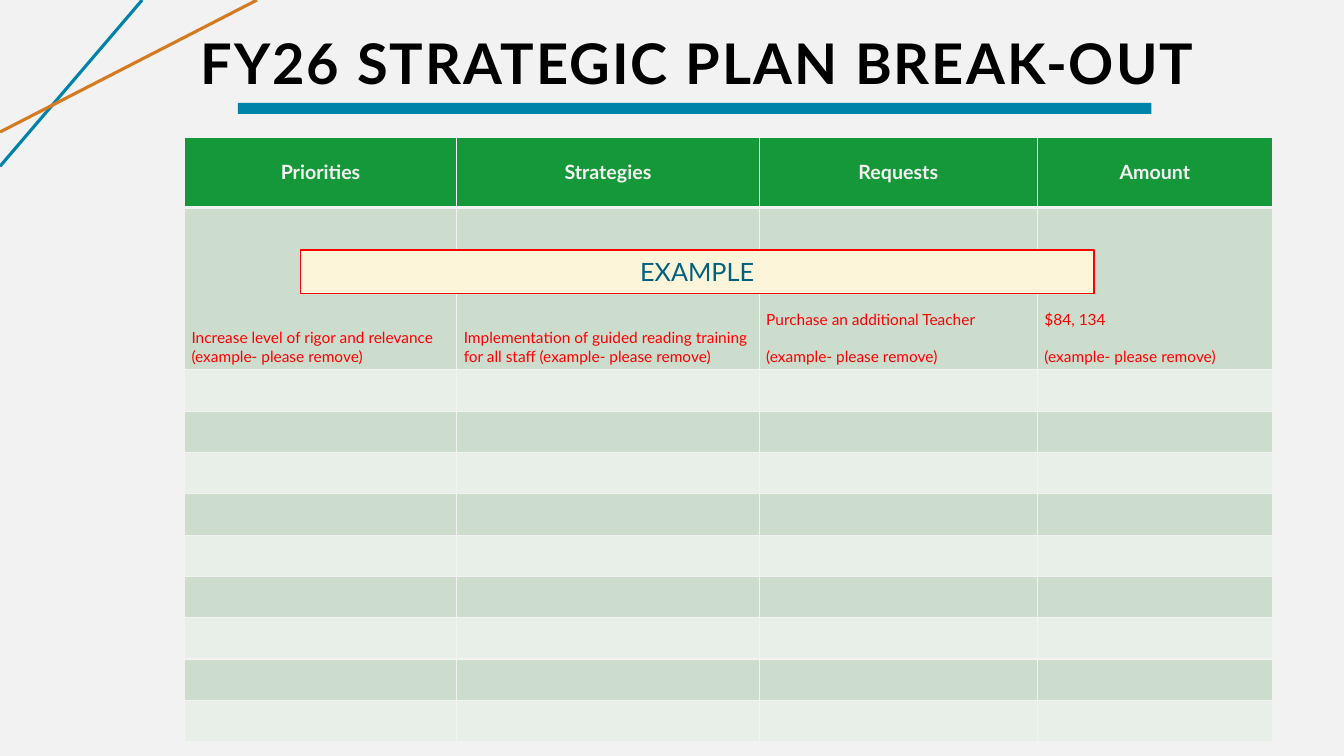
from lxml.etree import SubElement
from pptx import Presentation
from pptx.dml.color import RGBColor
from pptx.enum.shapes import MSO_CONNECTOR, MSO_SHAPE
from pptx.enum.text import MSO_ANCHOR as ANCHOR, PP_ALIGN as ALIGN
from pptx.oxml.ns import qn
from pptx.util import Inches, Pt

PAPER = RGBColor(0xF2, 0xF2, 0xF2)
BLACK = RGBColor(0, 0, 0)
TEAL = RGBColor(0x00, 0x83, 0xA9)
DEEP_TEAL = RGBColor(0x00, 0x62, 0x7F)
ORANGE = RGBColor(0xD4, 0x7B, 0x22)
GREEN = RGBColor(0x15, 0x98, 0x39)
BAND_DARK = RGBColor(0xCC, 0xDD, 0xCE)
BAND_LIGHT = RGBColor(0xE8, 0xEF, 0xE8)
RED = RGBColor(0xFF, 0, 0)
CREAM = RGBColor(0xFD, 0xF5, 0xDA)
FONT = "Lato"

COLS = [2.7, 3, 2.76, 2.33]
ROWS = [0.7, 1.61] + [0.41] * 9
HEADERS = ["Priorities", "Strategies", "Requests", "Amount"]
REMOVE = "(example- please remove)"
EXAMPLES = [
    [f"Increase level of rigor and relevance {REMOVE}"],
    [f"Implementation of guided reading training for all staff {REMOVE}"],
    ["Purchase an additional Teacher", REMOVE],
    ["$84, 134", REMOVE],
]


def add_run(p, text, size, color, bold=False):
    r = p.add_run()
    r.text = text
    r.font.name = FONT
    r.font.size = Pt(size)
    r.font.bold = bold
    r.font.color.rgb = color
    return r


def add_bar(slide, box, fill, line=None):
    sp = slide.shapes.add_shape(MSO_SHAPE.RECTANGLE, *map(Inches, box))
    sp.shadow.inherit = False
    sp.fill.solid()
    sp.fill.fore_color.rgb = fill
    if line is None:
        sp.line.fill.background()
    else:
        sp.line.color.rgb = line
        sp.line.width = Pt(1)
    return sp


def add_corner_lines(slide, box):
    x, y, w, h = box
    for color, across, down in ((TEAL, 0.553, 1), (ORANGE, 1, 0.794)):
        ends = (x + w * across, y, x, y + h * down)
        cx = slide.shapes.add_connector(MSO_CONNECTOR.STRAIGHT, *map(Inches, ends))
        cx.line.color.rgb = color
        cx.line.width = Pt(2.25)
        SubElement(cx._element.spPr, qn("a:effectLst"))


def add_title(slide, box):
    x, y, w, h = box
    tf = slide.shapes.add_textbox(*map(Inches, box)).text_frame
    tf.word_wrap = True
    tf.vertical_anchor = ANCHOR.MIDDLE
    p = tf.paragraphs[0]
    p.alignment = ALIGN.CENTER
    p.line_spacing = 0.9
    r = add_run(p, "FY26 STRATEGIC PLAN BREAK-OUT", 40, BLACK, True)
    r.font._element.set("spc", "150")
    add_bar(slide, (x + 0.53, y + 0.99, w * 0.89, 0.11), TEAL)


def style_cell(cell, fill, bottom):
    cell.margin_left = cell.margin_right = Inches(0.07)
    cell.margin_top = cell.margin_bottom = Inches(0.04)
    tcPr = cell._tc.get_or_add_tcPr()
    for side, width in (("L", 1), ("R", 1), ("T", 1), ("B", bottom)):
        ln = SubElement(tcPr, qn(f"a:ln{side}"), w=str(Pt(width)))
        solid = SubElement(ln, qn("a:solidFill"))
        SubElement(solid, qn("a:srgbClr"), val=str(PAPER))
    cell.fill.solid()
    cell.fill.fore_color.rgb = fill


def add_plan_table(slide, box):
    shape = slide.shapes.add_table(len(ROWS), len(COLS), *map(Inches, box))
    table = shape.table
    for col, width in zip(table.columns, COLS):
        col.width = Inches(width)
    for i, (row, height) in enumerate(zip(table.rows, ROWS)):
        row.height = Inches(height)
        fill = GREEN if i == 0 else BAND_DARK if i % 2 else BAND_LIGHT
        for cell in row.cells:
            style_cell(cell, fill, 3 if i == 0 else 1)
    for j, (header, lines) in enumerate(zip(HEADERS, EXAMPLES)):
        head, body = table.cell(0, j), table.cell(1, j)
        head.vertical_anchor = ANCHOR.MIDDLE
        p = head.text_frame.paragraphs[0]
        p.alignment = ALIGN.CENTER
        add_run(p, header, 14, PAPER, True)
        body.vertical_anchor = ANCHOR.BOTTOM
        tf = body.text_frame
        for k, line in enumerate(lines):
            p = tf.add_paragraph() if k else tf.paragraphs[0]
            if k:
                p.space_before = Pt(13.2)
            add_run(p, line, 11, RED)


def add_example_banner(slide, box):
    tf = add_bar(slide, box, CREAM, RED).text_frame
    tf.vertical_anchor = ANCHOR.MIDDLE
    p = tf.paragraphs[0]
    p.alignment = ALIGN.CENTER
    add_run(p, "EXAMPLE", 18, DEEP_TEAL)


def main():
    prs = Presentation()
    prs.slide_width, prs.slide_height = Inches(13.33), Inches(7.5)
    slide = prs.slides.add_slide(prs.slide_layouts[6])
    slide.background.fill.solid()
    slide.background.fill.fore_color.rgb = PAPER
    add_corner_lines(slide, (0, 0, 2.55, 1.65))
    add_title(slide, (1.83, 0.03, 10.18, 1.25))
    add_plan_table(slide, (1.83, 1.36, sum(COLS), sum(ROWS)))
    add_example_banner(slide, (2.98, 2.48, 7.87, 0.43))
    prs.save("out.pptx")


if __name__ == "__main__":
    main()
